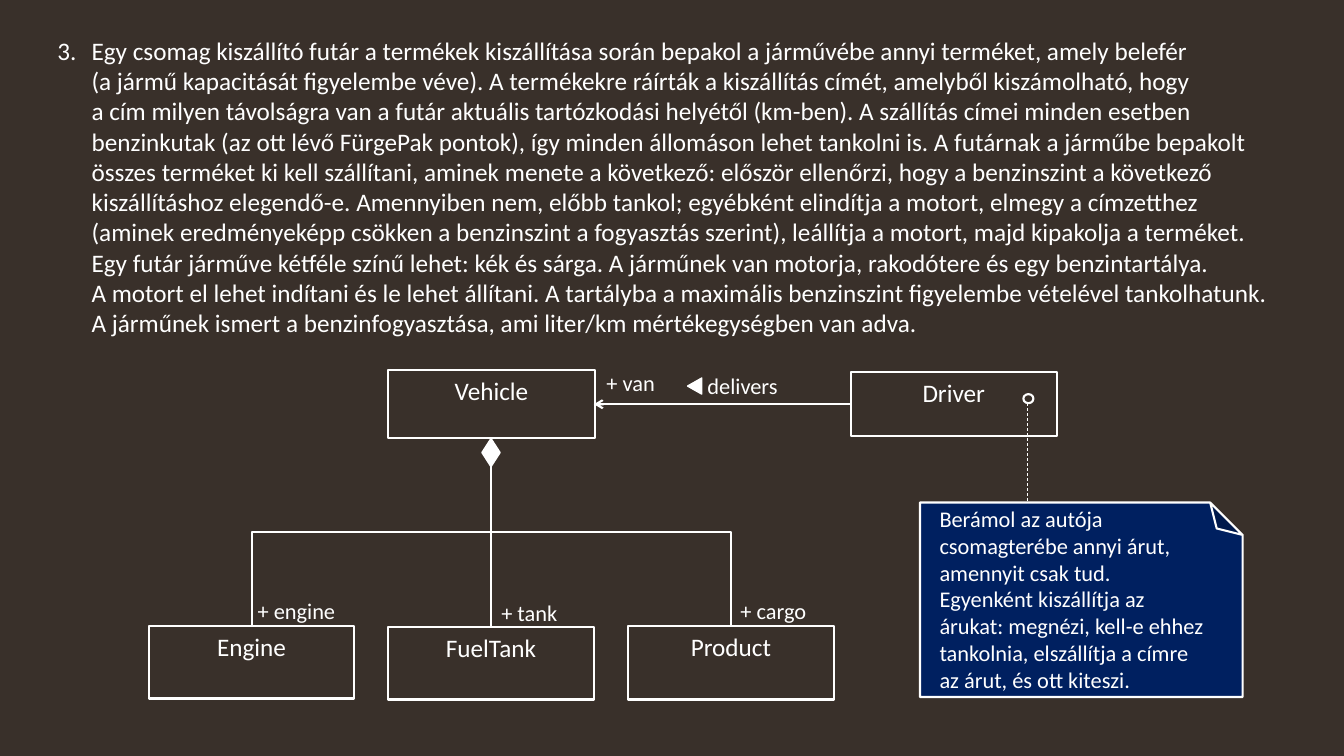
from lxml.etree import SubElement
from pptx import Presentation
from pptx.dml.color import RGBColor
from pptx.enum.dml import MSO_LINE
from pptx.enum.shapes import MSO_CONNECTOR, MSO_SHAPE
from pptx.enum.text import MSO_ANCHOR, PP_ALIGN
from pptx.oxml.ns import qn
from pptx.util import Inches, Pt

COLORS = {"background": "39302A", "white": "FFFFFF", "note": "002060"}


def write(shape, text, size=16, align=PP_ALIGN.LEFT, wrap=True):
    frame = shape.text_frame
    frame.word_wrap = wrap
    frame.vertical_anchor = MSO_ANCHOR.TOP
    frame.text = text
    for paragraph in frame.paragraphs:
        paragraph.alignment = align
        for run in paragraph.runs:
            run.font.name = "Calibri"
            run.font.size = Pt(size)
            run.font.color.rgb = RGBColor.from_string(COLORS["white"])


def draw(shape, fill=None, width=1.5):
    shape.line.color.rgb = RGBColor.from_string(COLORS["white"])
    shape.line.width = Pt(width)
    if hasattr(shape, "fill"):
        shape.shadow.inherit = False
        if fill:
            shape.fill.solid()
            shape.fill.fore_color.rgb = RGBColor.from_string(COLORS[fill])
        else:
            shape.fill.background()
    else:
        SubElement(shape._element.spPr, qn("a:effectLst"))
    return shape


prs = Presentation()
prs.slide_width, prs.slide_height = Inches(13.33), Inches(7.5)
slide = prs.slides.add_slide(prs.slide_layouts[6])
slide.background.fill.solid()
slide.background.fill.fore_color.rgb = RGBColor.from_string(COLORS["background"])
shapes = slide.shapes

# Task description, numbered 3
task_lines = [
    "Egy csomag kiszállító futár a termékek kiszállítása során bepakol a járművébe annyi terméket, amely belefér",
    "(a jármű kapacitását figyelembe véve). A termékekre ráírták a kiszállítás címét, amelyből kiszámolható, hogy",
    "a cím milyen távolságra van a futár aktuális tartózkodási helyétől (km-ben). A szállítás címei minden esetben",
    "benzinkutak (az ott lévő FürgePak pontok), így minden állomáson lehet tankolni is. A futárnak a járműbe bepakolt",
    "összes terméket ki kell szállítani, aminek menete a következő: először ellenőrzi, hogy a benzinszint a következő",
    "kiszállításhoz elegendő-e. Amennyiben nem, előbb tankol; egyébként elindítja a motort, elmegy a címzetthez",
    "(aminek eredményeképp csökken a benzinszint a fogyasztás szerint), leállítja a motort, majd kipakolja a terméket.",
    "Egy futár járműve kétféle színű lehet: kék és sárga. A járműnek van motorja, rakodótere és egy benzintartálya.",
    "A motort el lehet indítani és le lehet állítani. A tartályba a maximális benzinszint figyelembe vételével tankolhatunk.",
    "A járműnek ismert a benzinfogyasztása, ami liter/km mértékegységben van adva.",
]
task = shapes.add_textbox(Inches(0.47), Inches(0.3), Inches(12.4), Inches(3.13))
write(task, "\v".join(task_lines), size=18)
numbering = task.text_frame.paragraphs[0]._p.get_or_add_pPr()
numbering.set("marL", str(Inches(0.34)))
numbering.set("indent", str(-Inches(0.34)))
SubElement(numbering, qn("a:buFont"), typeface="Calibri")
SubElement(numbering, qn("a:buAutoNum"), type="arabicPeriod", startAt="3")

# Classes
classes = [
    ("Vehicle", 3.85, 3.67, 2.05, 0.68),
    ("Driver", 8.44, 3.69, 2.04, 0.64),
    ("Engine", 1.48, 6.21, 2.03, 0.72),
    ("FuelTank", 3.85, 6.22, 2.04, 0.72),
    ("Product", 6.23, 6.21, 2.04, 0.73),
]
for name, *place in classes:
    class_box = draw(shapes.add_shape(MSO_SHAPE.RECTANGLE, *map(Inches, place)))
    write(class_box, name, size=18, align=PP_ALIGN.CENTER)

# Composition branches: elbows turned so that they leave the parts vertically
whole_x, whole_y, part_y = 4.87, 4.35, 6.21
half_drop = (part_y - whole_y) / 2
middle_y = (part_y + whole_y) / 2
for part_x, side, turn in [(2.5, -1, 90), (7.25, 1, 270)]:
    middle_x = (part_x + whole_x) / 2
    half_span = abs(part_x - whole_x) / 2
    branch = draw(shapes.add_connector(
        MSO_CONNECTOR.ELBOW,
        Inches(middle_x - side * half_drop), Inches(middle_y + half_span),
        Inches(middle_x + side * half_drop), Inches(middle_y - half_span)))
    branch._element.spPr.find(qn("a:xfrm")).set("rot", str(turn * 60000))

# Straight lines: tank branch, delivery association, note anchor
straight_lines = [
    (whole_x, 6.22, whole_x, whole_y, 1.5),
    (5.89, 4.01, 8.44, 4.01, 1.5),
    (10.19, 4, 10.19, 5.07, 0.5),
]
tank_branch, association, note_anchor = [
    draw(shapes.add_connector(MSO_CONNECTOR.STRAIGHT, *map(Inches, ends)), width=width)
    for *ends, width in straight_lines
]
SubElement(association.line._get_or_add_ln(), qn("a:headEnd"), type="arrow")
note_anchor.line.dash_style = MSO_LINE.DASH

# Diamond, reading direction, anchor ring and note sheet
symbols = [
    (MSO_SHAPE.DIAMOND, 4.78, 4.35, 0.18, 0.28, 0, "white", 1),
    (MSO_SHAPE.ISOSCELES_TRIANGLE, 6.81, 3.76, 0.16, 0.14, 270, "white", 1),
    (MSO_SHAPE.OVAL, 10.15, 3.91, 0.1, 0.09, 0, None, 1.5),
    (MSO_SHAPE.FOLDED_CORNER, 9.76, 4.35, 1.93, 3.2, 270, "note", 1.5),
]
for kind, left, top, width, height, turn, fill, weight in symbols:
    symbol = shapes.add_shape(kind, Inches(left), Inches(top), Inches(width), Inches(height))
    draw(symbol, fill, weight).rotation = turn

# Role and association labels
labels = [
    ("delivers", 6.91, 3.64, 0.91),
    ("+ van", 5.91, 3.61, 0.69),
    ("+ engine", 2.45, 5.88, 0.98),
    ("+ tank", 4.87, 5.89, 0.76),
    ("+ cargo", 7.24, 5.88, 0.86),
]
for text, left, top, width in labels:
    label = shapes.add_textbox(Inches(left), Inches(top), Inches(width), Inches(0.37))
    write(label, text, align=PP_ALIGN.CENTER, wrap=False)

# Note text
note = shapes.add_textbox(Inches(9.22), Inches(4.96), Inches(2.86), Inches(1.99))
write(note, "Berámol az autója csomagterébe annyi árut, amennyit csak tud.\n"
      "Egyenként kiszállítja az árukat: megnézi, kell-e ehhez tankolnia, "
      "elszállítja a címre az árut, és ott kiteszi.")

prs.save("out.pptx")
